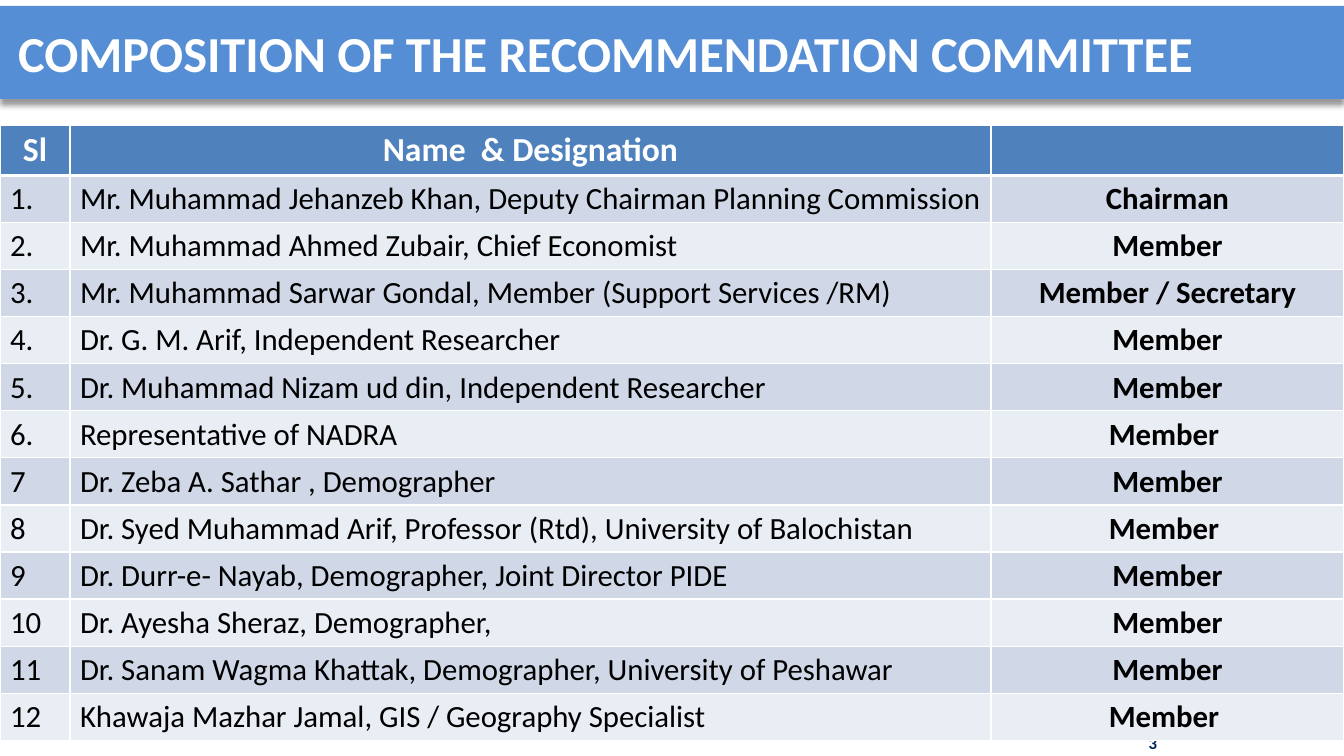
import dataclasses

import lxml.etree
import pptx
import pptx.dml.color
import pptx.enum.text
import pptx.oxml.ns
import pptx.util

TITLE = "COMPOSITION OF THE RECOMMENDATION COMMITTEE"
PAGE_NUMBER = "3"
HEADINGS = ("Sl", "Name  & Designation", "")
MEMBERS = [
    ("1.", "Mr. Muhammad Jehanzeb Khan, Deputy Chairman Planning Commission", "Chairman"),
    ("2.", "Mr. Muhammad Ahmed Zubair, Chief Economist", "Member"),
    ("3.", "Mr. Muhammad Sarwar Gondal, Member (Support Services /RM)", "Member / Secretary"),
    ("4.", "Dr. G. M. Arif, Independent Researcher", "Member"),
    ("5.", "Dr. Muhammad Nizam ud din, Independent Researcher", "Member"),
    ("6.", "Representative of NADRA", "Member "),
    ("7", "Dr. Zeba A. Sathar , Demographer", "Member"),
    ("8", "Dr. Syed Muhammad Arif, Professor (Rtd), University of Balochistan", "Member "),
    ("9", "Dr. Durr-e- Nayab, Demographer, Joint Director PIDE", "Member"),
    ("10", "Dr. Ayesha Sheraz, Demographer,", "Member"),
    ("11", "Dr. Sanam Wagma Khattak, Demographer, University of Peshawar", "Member"),
    ("12", "Khawaja Mazhar Jamal, GIS / Geography Specialist", "Member "),
]

SLIDE_SIZE = (1344, 756)
TITLE_BOX = (0, 6, 1344, 93)
TITLE_INDENT = 18
PAGE_NUMBER_BOX = (932, 723, 235, 40)
TABLE_TOP = 125
COLUMN_WIDTHS = (70, 921, 353)
HEADING_HEIGHT = 50
ROW_HEIGHT = 47
EMU_PER_PX = 914400 / 100.8
ALIGN = pptx.enum.text.PP_ALIGN
MIDDLE = pptx.enum.text.MSO_ANCHOR.MIDDLE


@dataclasses.dataclass(frozen=True)
class Theme:
    font: str = "Calibri"
    white: str = "FFFFFF"
    black: str = "000000"
    navy: str = "002060"
    banner: str = "558ED5"
    heading: str = "4F81BD"
    bands: tuple = ("D0D8E8", "E9EDF4")
    title_size: int = 36
    heading_size: int = 24
    body_size: int = 22
    page_size: int = 12
    border: int = 1
    heading_border: int = 3


THEME = Theme()


def px(value):
    return pptx.util.Emu(round(value * EMU_PER_PX))


def paint(target, color):
    target.fill.solid()
    target.fill.fore_color.rgb = pptx.dml.color.RGBColor.from_string(color)


def write(text_frame, text, *, size, color, bold=False, align=ALIGN.LEFT):
    paragraph = text_frame.paragraphs[0]
    paragraph.text = text
    paragraph.alignment = align
    font = paragraph.font
    font.name = THEME.font
    font.size = pptx.util.Pt(size)
    font.bold = bold
    font.color.rgb = pptx.dml.color.RGBColor.from_string(color)


def add_child(parent, tag, **attributes):
    child = lxml.etree.SubElement(parent, pptx.oxml.ns.qn(tag))
    for name, value in attributes.items():
        child.set(name, str(value))
    return child


def set_borders(cell, top, bottom):
    properties = cell._tc.get_or_add_tcPr()
    widths = {"L": THEME.border, "R": THEME.border, "T": top, "B": bottom}
    for side, width in widths.items():
        line = add_child(properties, f"a:ln{side}", w=pptx.util.Pt(width))
        add_child(add_child(line, "a:solidFill"), "a:srgbClr", val=THEME.white)


def add_shadow(shape):
    effects = add_child(shape._element.spPr, "a:effectLst")
    shadow = add_child(effects, "a:outerShdw", blurRad=pptx.util.Pt(4), dist=pptx.util.Pt(4),
                       dir=5400000, rotWithShape=0)
    add_child(add_child(shadow, "a:srgbClr", val=THEME.black), "a:alpha", val=40000)


def add_title(slide):
    title = slide.shapes.title
    title.left, title.top, title.width, title.height = map(px, TITLE_BOX)
    paint(title, THEME.banner)
    add_shadow(title)
    frame = title.text_frame
    frame.auto_size = pptx.enum.text.MSO_AUTO_SIZE.NONE
    frame.vertical_anchor = MIDDLE
    frame.margin_left = px(TITLE_INDENT)
    write(frame, TITLE, size=THEME.title_size, color=THEME.white, bold=True)


def add_page_number(slide):
    frame = slide.shapes.add_textbox(*map(px, PAGE_NUMBER_BOX)).text_frame
    frame.word_wrap = True
    frame.vertical_anchor = MIDDLE
    write(frame, PAGE_NUMBER, size=THEME.page_size, color=THEME.navy, bold=True, align=ALIGN.RIGHT)


def add_members(slide):
    rows = [HEADINGS, *MEMBERS]
    height = HEADING_HEIGHT + ROW_HEIGHT * len(MEMBERS)
    table = slide.shapes.add_table(len(rows), len(HEADINGS), px(0), px(TABLE_TOP),
                                   px(sum(COLUMN_WIDTHS)), px(height)).table
    for column, width in zip(table.columns, COLUMN_WIDTHS):
        column.width = px(width)
    for row_index, row in enumerate(rows):
        is_heading = row_index == 0
        table.rows[row_index].height = px(HEADING_HEIGHT if is_heading else ROW_HEIGHT)
        top = THEME.heading_border if row_index == 1 else THEME.border
        bottom = THEME.heading_border if is_heading else THEME.border
        for column_index, text in enumerate(row):
            cell = table.cell(row_index, column_index)
            emphasized = is_heading or column_index == 2
            set_borders(cell, top, bottom)
            paint(cell, THEME.heading if is_heading else THEME.bands[(row_index - 1) % 2])
            write(cell.text_frame, text,
                  size=THEME.heading_size if is_heading else THEME.body_size,
                  color=THEME.white if is_heading else THEME.black,
                  bold=emphasized, align=ALIGN.CENTER if emphasized else ALIGN.LEFT)


def main():
    presentation = pptx.Presentation()
    presentation.slide_width, presentation.slide_height = map(px, SLIDE_SIZE)
    slide = presentation.slides.add_slide(presentation.slide_layouts[5])
    add_title(slide)
    add_page_number(slide)
    add_members(slide)
    presentation.save("out.pptx")


if __name__ == "__main__":
    main()
